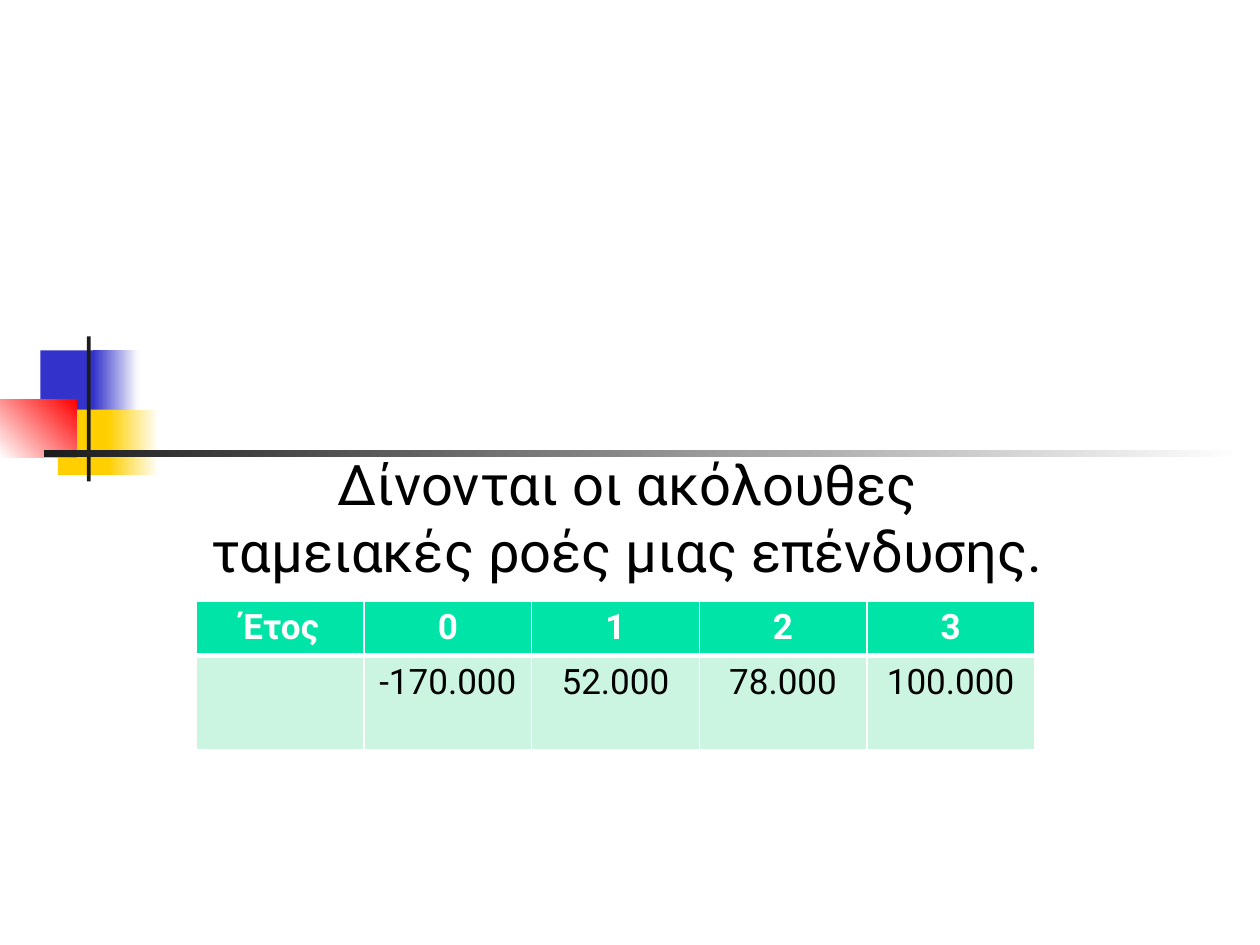
from lxml import etree
from pptx import Presentation
from pptx.dml.color import RGBColor
from pptx.enum import shapes, text
from pptx.oxml.ns import qn
from pptx.util import Inches, Pt

FONT = "Roboto"
COLORS = {
    "blue": "3333CC",
    "yellow": "FFCF01",
    "red": "FF0000",
    "dark": "1C1C1C",
    "white": "FFFFFF",
    "black": "000000",
    "header": "00E4A8",
    "body": "CCF5E1",
}
ROWS = [
    ["Έτος", "0", "1", "2", "3"],
    ["", "-170.000", "52.000", "78.000", "100.000"],
]
ROW_HEIGHTS = [0.43, 0.75]


def color(name):
    return RGBColor.from_string(COLORS[name])


def add_block(page, left, top, width, height, start, end=None, angle=0):
    """Add a borderless rectangle, solid or fading from start to end."""
    block = page.shapes.add_shape(
        shapes.MSO_SHAPE.RECTANGLE,
        Inches(left), Inches(top), Inches(width), Inches(height))
    block.shadow.inherit = False
    block.line.fill.background()
    if end is None:
        block.fill.solid()
        block.fill.fore_color.rgb = color(start)
        return
    block.fill.gradient()
    block.fill.gradient_angle = angle
    for stop, name in zip(block.fill.gradient_stops, (start, end)):
        stop.color.rgb = color(name)


def add_ornament(page):
    add_block(page, 0.32, 2.78, 0.48, 0.52, "blue")
    add_block(page, 0.74, 2.78, 0.36, 0.52, "blue", "white")
    add_block(page, 0.46, 3.25, 0.46, 0.52, "yellow")
    add_block(page, 0.86, 3.25, 0.4, 0.52, "yellow", "white")
    add_block(page, 0, 3.17, 0.61, 0.46, "white", "red", angle=45)
    add_block(page, 0.69, 2.67, 0.03, 1.15, "dark")
    add_block(page, 0.35, 3.57, 9.51, 0.06, "dark", "white")


def style_paragraph(para, size, name, bold=False):
    para.alignment = text.PP_ALIGN.CENTER
    para.font.size = Pt(size)
    para.font.bold = bold
    for span in para.runs:
        span.font.name = FONT
        span.font.size = Pt(size)
        span.font.bold = bold
        span.font.color.rgb = color(name)


def add_subtitle(page, words):
    box = page.shapes.add_textbox(Inches(1.48), Inches(3.52), Inches(7), Inches(1.92))
    frame = box.text_frame
    frame.word_wrap = True
    frame.text = words
    style_paragraph(frame.paragraphs[0], 32, "black")


def set_borders(cell, bottom_width):
    """Draw white cell borders; they must precede the fill in the XML."""
    properties = cell._tc.get_or_add_tcPr()
    widths = {"lnL": 1, "lnR": 1, "lnT": 1, "lnB": bottom_width}
    for tag, width in widths.items():
        line = etree.SubElement(properties, qn(f"a:{tag}"), w=str(Pt(width)))
        fill = etree.SubElement(line, qn("a:solidFill"))
        etree.SubElement(fill, qn("a:srgbClr"), val=COLORS["white"])


def add_cash_flows(page):
    frame = page.shapes.add_table(
        len(ROWS), len(ROWS[0]),
        Inches(1.56), Inches(4.77), Inches(6.65), Inches(sum(ROW_HEIGHTS)))
    table = frame.table
    for column in table.columns:
        column.width = Inches(1.33)
    for r, values in enumerate(ROWS):
        header = r == 0
        table.rows[r].height = Inches(ROW_HEIGHTS[r])
        for c, value in enumerate(values):
            cell = table.cell(r, c)
            cell.text = value
            style_paragraph(cell.text_frame.paragraphs[0], 20,
                            "white" if header else "black", bold=header)
            set_borders(cell, 3 if header else 1)
            cell.fill.solid()
            cell.fill.fore_color.rgb = color("header" if header else "body")


def main():
    deck = Presentation()
    deck.slide_width, deck.slide_height = Inches(10), Inches(7.5)
    page = deck.slides.add_slide(deck.slide_layouts[6])
    add_ornament(page)
    add_subtitle(page, "Δίνονται οι ακόλουθες ταμειακές ροές μιας επένδυσης.")
    add_cash_flows(page)
    deck.save("out.pptx")


if __name__ == "__main__":
    main()
